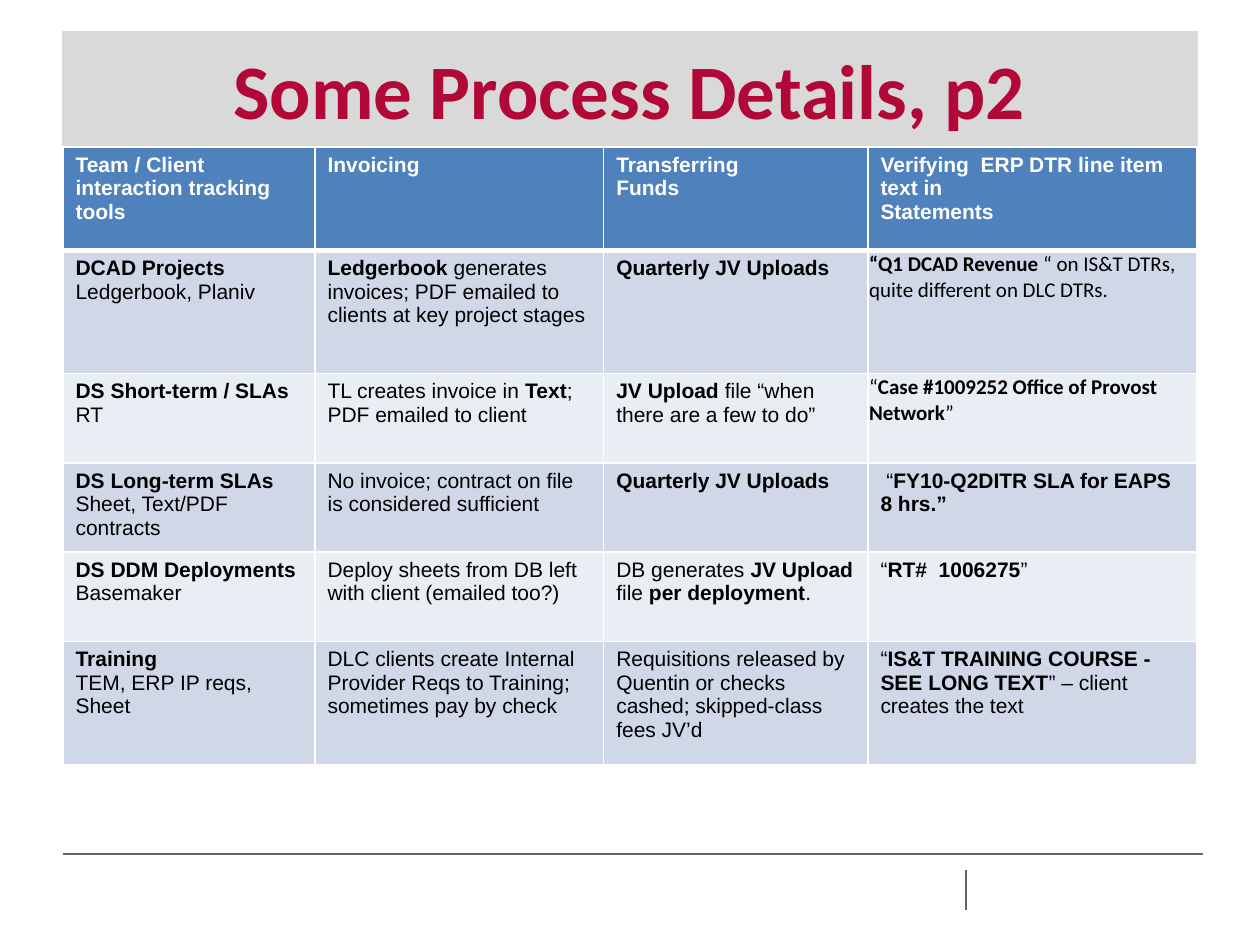
"""Build the process details slide: title band, billing table and footer rules."""
import pptx
import pptx.dml.color
import pptx.enum.shapes
import pptx.enum.text
import pptx.oxml.ns
import pptx.util
from lxml import etree

Pt = pptx.util.Pt
RGBColor = pptx.dml.color.RGBColor

WHITE = RGBColor(0xFF, 0xFF, 0xFF)
BLACK = RGBColor(0x00, 0x00, 0x00)
GRAY = RGBColor(0x66, 0x66, 0x66)
BAND = RGBColor(0xD9, 0xD9, 0xD9)
CRIMSON = RGBColor(0xB2, 0x08, 0x38)
HEADER_BLUE = RGBColor(0x4F, 0x81, 0xBD)
ROW_FILLS = (RGBColor(0xD0, 0xD8, 0xE8), RGBColor(0xE9, 0xED, 0xF4))

TITLE = "Some Process Details, p2"
# Asterisks switch bold on and off; \v breaks a line and \n starts a paragraph.
HEADER = (
    "*Team / Client interaction tracking tools*",
    "*Invoicing*",
    "*Transferring \vFunds*",
    "*Verifying  ERP DTR line item text in \vStatements*",
)
ROWS = (
    (
        "*DCAD Projects*\vLedgerbook, Planiv",
        "*Ledgerbook* generates invoices; PDF emailed to clients at key project stages",
        "*Quarterly JV Uploads*",
        "*“Q1 DCAD Revenue* “ on IS&T DTRs, quite different on DLC DTRs.",
    ),
    (
        "*DS Short-term / SLAs*\vRT",
        "TL creates invoice in *Text*; PDF emailed to client",
        "*JV Upload *file “when there are a few to do”",
        "“*Case #1009252 Office of Provost Network*”",
    ),
    (
        "*DS Long-term SLAs*\nSheet, Text/PDF contracts",
        "No invoice; contract on file is considered sufficient",
        "*Quarterly JV Uploads*",
        " “*FY10-Q2DITR SLA for EAPS 8 hrs.”*",
    ),
    (
        "*DS DDM Deployments*\vBasemaker",
        "Deploy sheets from DB left with client (emailed too?)",
        "DB generates *JV Upload* file *per deployment*.",
        "“*RT#  1006275*”",
    ),
    (
        "*Training*\vTEM, ERP IP reqs, Sheet",
        "DLC clients create Internal Provider Reqs to Training; sometimes pay by check",
        "Requisitions released by Quentin or checks cashed; skipped-class fees JV’d",
        "“*IS&T TRAINING COURSE - SEE LONG TEXT*” – client creates the text",
    ),
)
TIGHT_CELLS = {(1, 3), (2, 3)}
COLUMN_WIDTHS = (144, 165, 151, 188)
ROW_HEIGHTS = (59, 70.5, 51, 51, 51, 70.5)
LEFT, TITLE_TOP, TITLE_HEIGHT = 36, 18, 66
FOOTER_RULES = ((36, 488, 687.6, 488), (552, 520, 552, 497))


def add_span(para, text, font_name, size, color, bold):
    span = para.add_run()
    span.text = text
    span.font.name = font_name
    span.font.size = Pt(size)
    span.font.bold = bold
    span.font.color.rgb = color


def write_cell(cell, text, font_name, color):
    frame = cell.text_frame
    for number, block in enumerate(text.split("\n")):
        para = frame.add_paragraph() if number else frame.paragraphs[0]
        for position, part in enumerate(block.split("*")):
            for line_number, line in enumerate(part.split("\v")):
                if line_number:
                    para.add_line_break()
                if line:
                    add_span(para, line, font_name, 12, color, position % 2 == 1)


def set_borders(cell, bottom_width):
    properties = cell._tc.get_or_add_tcPr()
    widths = {"lnL": 1, "lnR": 1, "lnT": 1, "lnB": bottom_width}
    for index, (side, width) in enumerate(widths.items()):
        line = etree.Element(pptx.oxml.ns.qn("a:" + side), w=str(Pt(width)))
        fill = etree.SubElement(line, pptx.oxml.ns.qn("a:solidFill"))
        etree.SubElement(fill, pptx.oxml.ns.qn("a:srgbClr"), val=str(WHITE))
        properties.insert(index, line)


def add_rule(page, ends):
    rule = page.shapes.add_connector(
        pptx.enum.shapes.MSO_CONNECTOR.STRAIGHT, *(Pt(value) for value in ends))
    rule.line.color.rgb = GRAY
    rule.line.width = Pt(1)
    etree.SubElement(rule._element.spPr, pptx.oxml.ns.qn("a:effectLst"))


def add_title(page):
    box = page.shapes.add_shape(
        pptx.enum.shapes.MSO_SHAPE.RECTANGLE,
        Pt(LEFT), Pt(TITLE_TOP), Pt(sum(COLUMN_WIDTHS)), Pt(TITLE_HEIGHT))
    box.shadow.inherit = False
    box.fill.solid()
    box.fill.fore_color.rgb = BAND
    box.line.color.rgb = BAND
    box.line.width = Pt(0.75)
    box.text_frame.word_wrap = True
    box.text_frame.vertical_anchor = pptx.enum.text.MSO_ANCHOR.MIDDLE
    para = box.text_frame.paragraphs[0]
    para.alignment = pptx.enum.text.PP_ALIGN.CENTER
    add_span(para, TITLE, "Calibri", 44, CRIMSON, True)


def add_process_table(page):
    content = (HEADER,) + ROWS
    table = page.shapes.add_table(
        len(content), len(HEADER), Pt(LEFT), Pt(TITLE_TOP + TITLE_HEIGHT),
        Pt(sum(COLUMN_WIDTHS)), Pt(sum(ROW_HEIGHTS))).table
    for column, width in zip(table.columns, COLUMN_WIDTHS):
        column.width = Pt(width)
    for row_index, texts in enumerate(content):
        table.rows[row_index].height = Pt(ROW_HEIGHTS[row_index])
        is_header = row_index == 0
        for column_index, text in enumerate(texts):
            cell = table.cell(row_index, column_index)
            is_tight = (row_index, column_index) in TIGHT_CELLS
            if is_tight:
                cell.margin_left = cell.margin_right = cell.margin_top = Pt(0.75)
                cell.margin_bottom = Pt(0)
            cell.fill.solid()
            cell.fill.fore_color.rgb = (
                HEADER_BLUE if is_header else ROW_FILLS[(row_index - 1) % 2])
            set_borders(cell, 3 if is_header else 1)
            write_cell(cell, text, "Calibri" if is_tight else "Arial",
                       WHITE if is_header else BLACK)


def main():
    deck = pptx.Presentation()
    deck.slide_width, deck.slide_height = Pt(720), Pt(540)
    page = deck.slides.add_slide(deck.slide_layouts[6])
    for ends in FOOTER_RULES:
        add_rule(page, ends)
    add_title(page)
    add_process_table(page)
    deck.save("out.pptx")


if __name__ == "__main__":
    main()
